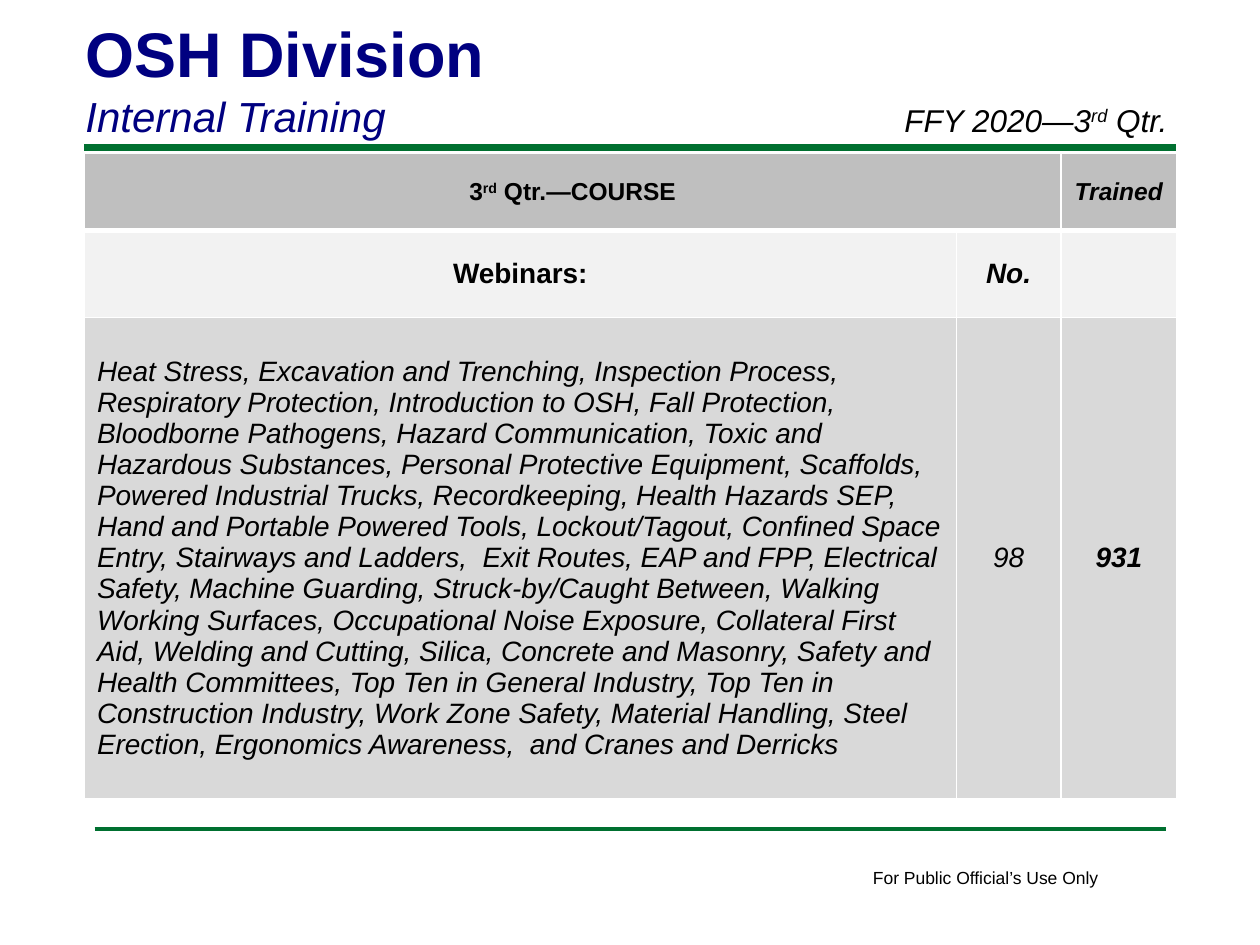
from lxml import etree
from pptx import Presentation
from pptx.dml.color import RGBColor
from pptx.enum.shapes import MSO_CONNECTOR
from pptx.enum.text import MSO_ANCHOR, PP_ALIGN
from pptx.oxml import parse_xml
from pptx.oxml.ns import nsdecls, qn
from pptx.util import Inches, Pt

COLORS = {
    "green": "007030", "navy": "000080", "black": "000000", "white": "FFFFFF",
    "header": "BFBFBF", "subheader": "F2F2F2", "body": "D9D9D9",
}


def add_run(paragraph, text, size, color="black", bold=False, italic=False, raised=False):
    run = paragraph.add_run()
    run.text = text
    font = run.font
    font.name, font.size, font.bold, font.italic = "Arial", Pt(size), bold, italic
    font.color.rgb = RGBColor.from_string(COLORS[color])
    if raised:
        run._r.get_or_add_rPr().set("baseline", "30000")


def add_text_frame(left, top, width, height, wrap=True):
    box = slide.shapes.add_textbox(Inches(left), Inches(top), Inches(width), Inches(height))
    box.text_frame.word_wrap = wrap
    box.text_frame.vertical_anchor = MSO_ANCHOR.MIDDLE
    return box.text_frame


prs = Presentation()
prs.slide_width, prs.slide_height = Inches(10), Inches(7.5)
slide = prs.slides.add_slide(prs.slide_layouts[6])

# Green rules above and below the table
for left, right, y, weight in [(0.67, 9.33, 1.17, 4), (0.75, 9.25, 6.58, 2)]:
    rule = slide.shapes.add_connector(
        MSO_CONNECTOR.STRAIGHT, Inches(left), Inches(y), Inches(right), Inches(y))
    rule.line.color.rgb = RGBColor.from_string(COLORS["green"])
    rule.line.width = Pt(weight)
    etree.SubElement(rule._element.spPr, qn("a:effectLst"))

# Footer
footer = add_text_frame(6.83, 6.83, 2.01, 0.27, wrap=False)
add_run(footer.paragraphs[0], "For Public Official’s Use Only", 10)

# Training table: each cell is a list of runs
courses = ", ".join([
    "Heat Stress, Excavation and Trenching, Inspection Process, Respiratory Protection",
    "Introduction to OSH, Fall Protection, Bloodborne Pathogens, Hazard Communication",
    "Toxic and Hazardous Substances, Personal Protective Equipment, Scaffolds",
    "Powered Industrial Trucks, Recordkeeping, Health Hazards SEP",
    "Hand and Portable Powered Tools, Lockout/Tagout, Confined Space Entry",
    "Stairways and Ladders,  Exit Routes, EAP and FPP, Electrical Safety",
    "Machine Guarding, Struck-by/Caught Between, Walking Working Surfaces",
    "Occupational Noise Exposure, Collateral First Aid, Welding and Cutting, Silica",
    "Concrete and Masonry, Safety and Health Committees, Top Ten in General Industry",
    "Top Ten in Construction Industry, Work Zone Safety, Material Handling",
    "Steel Erection, Ergonomics Awareness,  and Cranes and Derricks",
])
bold, italic = {"bold": True}, {"italic": True}
bold_italic = {**bold, **italic}
rows = [
    ("header", 0.61, 14, [
        [("3", bold), ("rd", {**bold, "raised": True}), (" Qtr.—COURSE", bold)],
        [],
        [("Trained", bold_italic)]]),
    ("subheader", 0.69, 16, [[("Webinars:", bold)], [("No.", bold_italic)], []]),
    ("body", 3.82, 16, [[(courses, italic)], [("98", italic)], [("931", bold_italic)]]),
]
table = slide.shapes.add_table(
    3, 3, Inches(0.67), Inches(1.22), Inches(8.67), Inches(5.11)).table
for column, width in zip(table.columns, (6.92, 0.83, 0.92)):
    column.width = Inches(width)

for r, (fill, height, size, contents) in enumerate(rows):
    table.rows[r].height = Inches(height)
    for c, runs in enumerate(contents):
        cell = table.cell(r, c)
        cell.vertical_anchor = MSO_ANCHOR.MIDDLE
        paragraph = cell.text_frame.paragraphs[0]
        is_course_list = fill == "body" and c == 0
        paragraph.alignment = PP_ALIGN.LEFT if is_course_list else PP_ALIGN.CENTER
        for text, style in runs:
            add_run(paragraph, text, size, **style)

        # White borders, thicker between the header and the rows below
        cell_props = cell._tc.get_or_add_tcPr()
        for side in "LRTB":
            thick = (r, side) in [(0, "B"), (1, "T")]
            cell_props.append(parse_xml(
                f'<a:ln{side} {nsdecls("a")} w="{Pt(3 if thick else 1)}"><a:solidFill>'
                f'<a:srgbClr val="{COLORS["white"]}"/></a:solidFill></a:ln{side}>'))
        cell.fill.solid()
        cell.fill.fore_color.rgb = RGBColor.from_string(COLORS[fill])
table.cell(0, 0).merge(table.cell(0, 1))

# Title and subtitle
title = add_text_frame(0.58, 0.06, 8.25, 1.11)
add_run(title.paragraphs[0], "OSH Division", 36, "navy", bold=True)
add_run(title.add_paragraph(), "Internal Training", 24, "navy", italic=True)

# Reporting period
period = add_text_frame(7.08, 0.75, 2.5, 0.4).paragraphs[0]
add_run(period, "FFY 2020—3", 18, italic=True)
add_run(period, "rd", 18, italic=True, raised=True)
add_run(period, " Qtr.", 18, italic=True)

prs.save("out.pptx")
